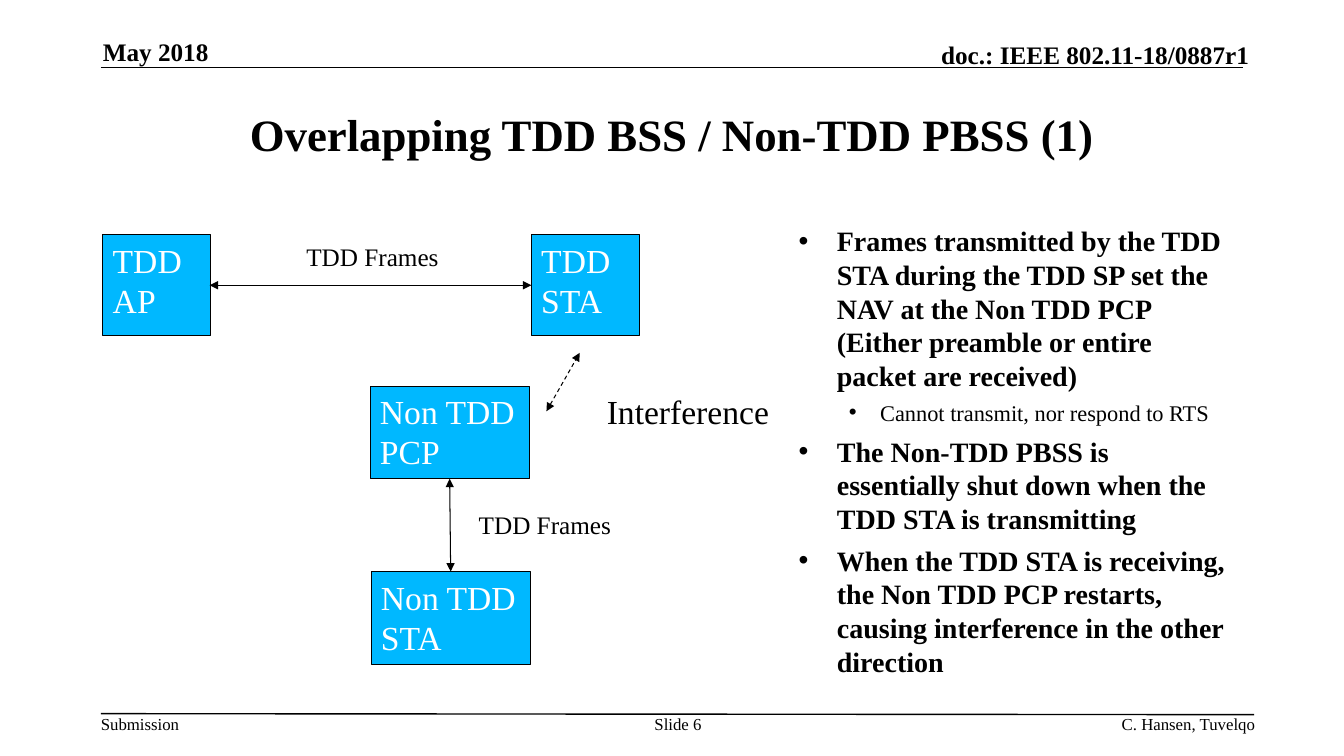
from lxml import etree
from pptx import Presentation
from pptx.dml.color import RGBColor
from pptx.enum import dml, shapes, text
from pptx.oxml import ns
from pptx.util import Emu, Pt

PX = 9144
FONT = "Times New Roman"
BLACK = RGBColor(0x00, 0x00, 0x00)
WHITE = RGBColor(0xFF, 0xFF, 0xFF)
STATION_BLUE = RGBColor(0x00, 0xB8, 0xFF)
LEFT, CENTER, RIGHT = text.PP_ALIGN.LEFT, text.PP_ALIGN.CENTER, text.PP_ALIGN.RIGHT
TOP, MIDDLE, BOTTOM = text.MSO_ANCHOR.TOP, text.MSO_ANCHOR.MIDDLE, text.MSO_ANCHOR.BOTTOM

BULLETS = [
    (0, "Frames transmitted by the TDD STA during the TDD SP set the NAV at the "
        "Non TDD PCP (Either preamble or entire packet are received)"),
    (1, "Cannot transmit, nor respond to RTS"),
    (0, "The Non-TDD PBSS is essentially shut down when the TDD STA is transmitting"),
    (0, "When the TDD STA is receiving, the Non TDD PCP restarts, causing "
        "interference in the other direction"),
]
LEVELS = [(20, True, 38, -38, 6), (16, False, 81, -31, 5)]


def px(*lengths):
    """Turn pixel lengths into EMU."""
    return [Emu(length * PX) for length in lengths]


def format_paragraph(paragraph, size, color=BLACK, bold=False, align=LEFT):
    """Set the alignment of a paragraph and the font of its runs."""
    paragraph.alignment = align
    for run in paragraph.runs:
        run.font.name = FONT
        run.font.size = Pt(size)
        run.font.bold = bold
        run.font.color.rgb = color


def set_frame(frame, anchor=TOP, wrap=True, margins=(10, 5)):
    """Set anchor, wrapping and margins of a text frame."""
    frame.auto_size = text.MSO_AUTO_SIZE.NONE
    frame.word_wrap = wrap
    frame.vertical_anchor = anchor
    frame.margin_left = frame.margin_right = Emu(margins[0] * PX)
    frame.margin_top = frame.margin_bottom = Emu(margins[1] * PX)


def place(placeholder, box):
    """Move a placeholder to a pixel box."""
    placeholder.left, placeholder.top, placeholder.width, placeholder.height = px(*box)


def add_title(slide, wording):
    """Fill the title placeholder."""
    title = slide.shapes.title
    place(title, (100, 75, 1133, 116))
    set_frame(title.text_frame, MIDDLE)
    title.text_frame.text = wording
    format_paragraph(title.text_frame.paragraphs[0], 32, bold=True, align=CENTER)


def add_bullets(slide, bullets):
    """Fill the body placeholder with a two-level list."""
    body = slide.placeholders[1]
    place(body, (782, 217, 451, 450))
    frame = body.text_frame
    set_frame(frame)
    frame.text = "\n".join(wording for _, wording in bullets)
    for paragraph, (level, _) in zip(frame.paragraphs, bullets):
        size, bold, margin, indent, space = LEVELS[level]
        paragraph.level = level
        paragraph.space_before = Pt(space)
        format_paragraph(paragraph, size, bold=bold)
        properties = paragraph._p.get_or_add_pPr()
        properties.set("marL", str(margin * PX))
        properties.set("indent", str(indent * PX))
        etree.SubElement(properties, ns.qn("a:buFont"), typeface="Arial")
        etree.SubElement(properties, ns.qn("a:buChar"), char="•")


def add_caption(slide, box, wording, size, align=LEFT, anchor=TOP, bold=False):
    """Add a header or footer text."""
    caption = slide.shapes.add_textbox(*px(*box)).text_frame
    set_frame(caption, anchor, margins=(0, 0))
    caption.text = wording
    format_paragraph(caption.paragraphs[0], size, bold=bold, align=align)


def add_box(slide, box, wording, size, fill, line, line_width, color, wrap):
    """Add a filled rectangle with text at its top left."""
    rectangle = slide.shapes.add_shape(shapes.MSO_SHAPE.RECTANGLE, *px(*box))
    rectangle.shadow.inherit = False
    rectangle.fill.solid()
    rectangle.fill.fore_color.rgb = fill
    rectangle.line.color.rgb = line
    rectangle.line.width = Pt(line_width)
    set_frame(rectangle.text_frame, wrap=wrap)
    rectangle.text_frame.text = wording
    format_paragraph(rectangle.text_frame.paragraphs[0], size, color)


def add_station(slide, box, wording):
    """Add a blue station box."""
    add_box(slide, box, wording, 24, STATION_BLUE, BLACK, 0.75, WHITE, True)


def add_label(slide, box, wording, size):
    """Add a white label beside a link."""
    add_box(slide, box, wording, size, WHITE, WHITE, 2, BLACK, False)


def add_line(slide, ends, width, arrows=False, dashed=False):
    """Add a straight line, optionally dashed or with two arrowheads."""
    line = slide.shapes.add_connector(shapes.MSO_CONNECTOR.STRAIGHT, *px(*ends))
    line.line.color.rgb = BLACK
    line.line.width = Pt(width)
    if dashed:
        line.line.dash_style = dml.MSO_LINE.DASH
    if arrows:
        outline = line.line._get_or_add_ln()
        for end in ("a:headEnd", "a:tailEnd"):
            etree.SubElement(outline, ns.qn(end), type="triangle")
    etree.SubElement(line._element.spPr, ns.qn("a:effectLst"))


def main():
    """Build the slide and save it."""
    deck = Presentation()
    deck.slide_width, deck.slide_height = px(1333, 750)
    slide = deck.slides.add_slide(deck.slide_layouts[1])

    add_line(slide, (100, 67, 1233, 67), 1)
    add_line(slide, (100, 708, 1244, 709), 1)
    add_caption(slide, (102, 36, 273, 30), "May 2018", 18, anchor=BOTTOM, bold=True)
    add_caption(slide, (729, 39, 510, 30), "doc.: IEEE 802.11-18/0887r1", 18,
                RIGHT, BOTTOM, True)
    add_caption(slide, (100, 708, 79, 20), "Submission", 12)
    add_caption(slide, (634, 708, 77, 40), "Slide 6", 12, CENTER)
    add_caption(slide, (781, 708, 464, 20), "C. Hansen, Tuvelqo", 12, RIGHT)

    add_title(slide, "Overlapping TDD BSS / Non-TDD PBSS (1)")
    add_bullets(slide, BULLETS)

    add_station(slide, (102, 233, 107, 100), "TDD AP")
    add_station(slide, (527, 233, 107, 100), "TDD STA")
    add_station(slide, (367, 383, 158, 92), "Non TDD PCP")
    add_station(slide, (368, 567, 158, 92), "Non TDD STA")

    add_line(slide, (208, 283, 527, 283), 0.75, arrows=True)
    add_line(slide, (447, 567, 446, 475), 0.75, arrows=True)
    add_line(slide, (542, 408, 575, 350), 0.75, arrows=True, dashed=True)

    add_label(slide, (592, 383, 183, 50), "Interference", 24)
    add_label(slide, (294, 234, 153, 40), "TDD Frames", 18)
    add_label(slide, (465, 500, 153, 40), "TDD Frames", 18)

    deck.save("out.pptx")


if __name__ == "__main__":
    main()
